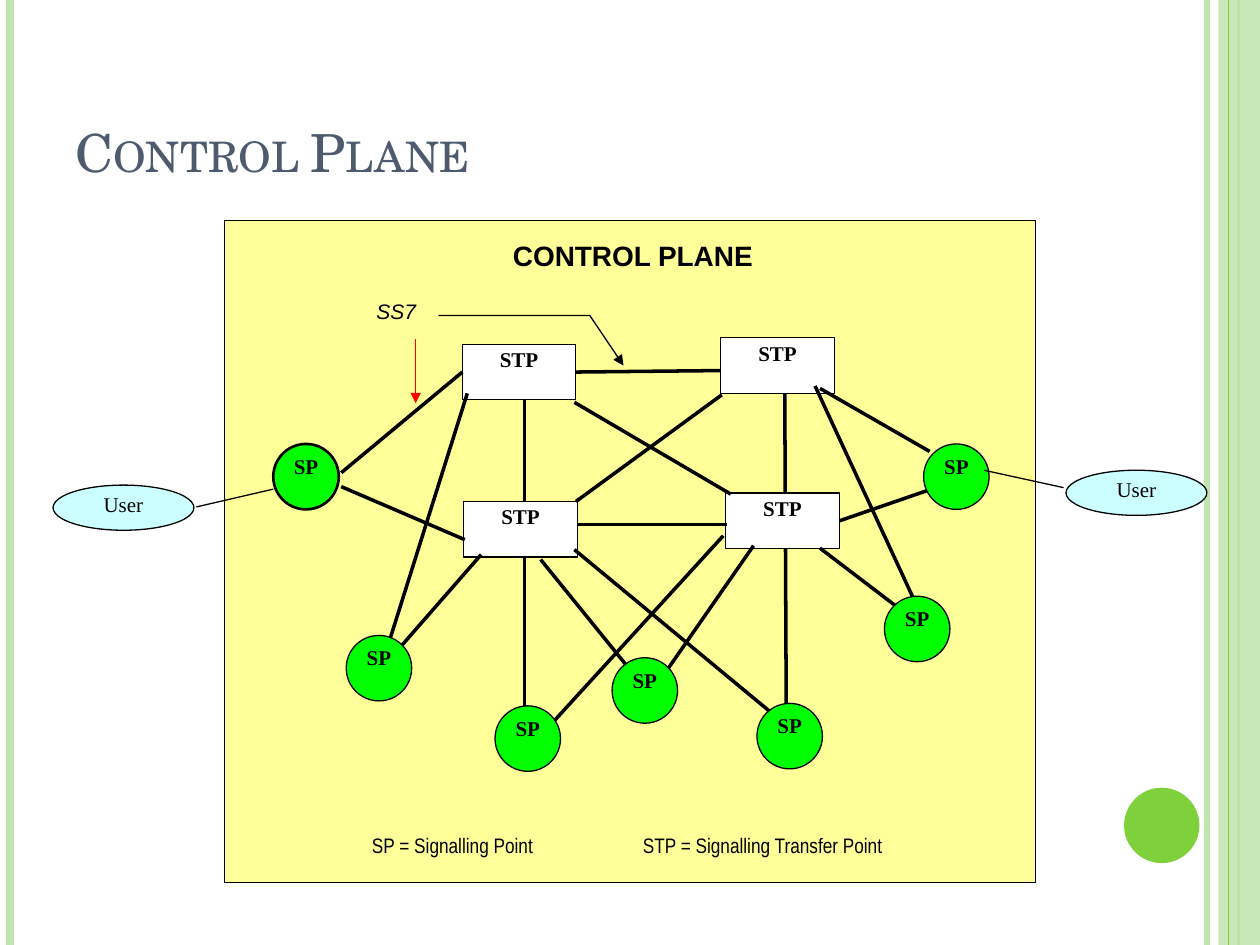
from dataclasses import dataclass

from pptx import Presentation
from pptx.dml.color import RGBColor
from pptx.enum.shapes import MSO_CONNECTOR, MSO_SHAPE
from pptx.enum.text import MSO_ANCHOR, MSO_AUTO_SIZE, PP_ALIGN
from pptx.oxml.ns import qn
from pptx.util import Cm, Pt
from lxml import etree

RECT, OVAL, STRAIGHT = MSO_SHAPE.RECTANGLE, MSO_SHAPE.OVAL, MSO_CONNECTOR.STRAIGHT
TOP, BOTTOM = MSO_ANCHOR.TOP, MSO_ANCHOR.BOTTOM
LEFT, CENTER = PP_ALIGN.LEFT, PP_ALIGN.CENTER
SITE_LEFT, SITE_RIGHT = 1, 3


@dataclass(frozen=True)
class Theme:
    ink: str = "000000"
    title: str = "4E5B6F"
    accent: str = "7FD13B"
    pale: str = "C0E5AF"
    panel: str = "FFFF99"
    stp: str = "FFFFFF"
    sp: str = "00FF00"
    user: str = "CCFFFF"
    alert: str = "FF0000"
    title_size: int = 30
    heading_size: int = 16
    label_size: int = 12
    thin: float = 0.75
    medium: float = 1.5
    thick: float = 2


T = Theme()
TITLE_FONT = dict(name="TeX Gyre Schola", size=T.title_size, color=T.title)
HEADING_FONT = dict(name="Arial", size=T.heading_size, bold=True)
SIGNAL_FONT = dict(name="Arial", size=T.label_size, italic=True)
LEGEND_FONT = dict(name="Arial Narrow", size=T.label_size)
USER_FONT = dict(name="Times New Roman", size=T.label_size)
NODE_FONT = dict(USER_FONT, bold=True)

# Positions below are centimetres from the top left corner of the panel.
STP_SIZE, SP_SIZE, USER_SIZE = (2.29, 1.12), (1.32, 1.32), (2.84, 0.91)
STPS = {"A": (4.8, 2.49), "B": (10.01, 2.36), "C": (4.83, 5.66), "D": (10.11, 5.49)}
SPS = [(2.46, 8.36), (5.46, 9.78), (7.82, 8.81), (10.74, 9.73), (13.31, 7.57), (14.1, 4.5)]
MAIN_SP = (0.99, 4.5)
USERS = [(-3.45, 5.33), (16.97, 5.03)]
TRUNKS = [((11.33, 9.91), (11.3, 3.48)), ((6.05, 10.01), (6.05, 3.48))]
# An end is either a point or an STP with one of its connection sites.
LINKS = [
    ((2.36, 5.08), ("A", SITE_LEFT)),
    ((3.35, 8.41), (4.9, 3.48)),
    ((2.36, 5.36), (4.85, 6.43)),
    (("A", SITE_RIGHT), (10.01, 3.02)),
    ((7.06, 3.66), (10.21, 5.51)),
    ((6.38, 6.83), (8.13, 8.99)),
    ((7.06, 6.63), (11.02, 9.91)),
    ((10.67, 6.55), (8.94, 9.04)),
    ((10.06, 6.35), (6.58, 10.16)),
    ((5.18, 6.73), (3.58, 8.56)),
    ((12.01, 3.38), (14.22, 4.65)),
    (("D", SITE_RIGHT), (14.17, 5.44)),
    ((11.91, 3.33), (13.92, 7.67)),
    ((12.01, 6.6), (13.61, 7.82)),
    ((7.14, 6.12), (10.13, 6.12)),
    ((7.09, 5.66), (10.03, 3.51)),
]
USER_LINKS = [((-0.56, 5.77), (0.99, 5.41)), ((15.32, 5.03), (16.92, 5.38))]
SIGNAL_ARROW = ((3.86, 2.39), (3.86, 3.68))
SIGNAL_BEND = [(4.32, 1.91), (7.37, 1.91), (8.05, 2.92)]


def rgb(value):
    return RGBColor.from_string(value)


def write(shape, text, font, align=CENTER, anchor=TOP, inset=0.05, wrap=True):
    tf = shape.text_frame
    sides = dict.fromkeys(("margin_left", "margin_top", "margin_right", "margin_bottom"), Cm(inset))
    for key, value in dict(sides, word_wrap=wrap, vertical_anchor=anchor).items():
        setattr(tf, key, value)
    p = tf.paragraphs[0]
    p.alignment = align
    r = p.add_run()
    r.text = text
    for key, value in font.items():
        if key != "color":
            setattr(r.font, key, Pt(value) if key == "size" else value)
    r.font.color.rgb = rgb(font.get("color", T.ink))
    return p


def add_box(s, kind, at, size, fill, width=T.thin):
    """Add a filled preset shape; a width of 0 leaves out its outline."""
    sp = s.shapes.add_shape(kind, *map(Cm, (*at, *size)))
    sp.shadow.inherit = False
    sp.fill.solid()
    sp.fill.fore_color.rgb = rgb(fill)
    if width:
        sp.line.color.rgb = rgb(T.ink)
        sp.line.width = Pt(width)
    else:
        sp.line.fill.background()
    return sp


def add_label(s, at, size, text, font, align=CENTER):
    return write(s.shapes.add_textbox(*map(Cm, (*at, *size))), text, font, align)


def add_line(s, start, end, color=T.ink, width=T.thick):
    line = s.shapes.add_connector(STRAIGHT, *map(Cm, (*start, *end)))
    line.line.color.rgb = rgb(color)
    line.line.width = Pt(width)
    etree.SubElement(line._element.spPr, qn("a:effectLst"))
    return line


def add_arrowhead(line):
    etree.SubElement(line.line._get_or_add_ln(), qn("a:tailEnd"), type="triangle")


def add_frame(s, width, height):
    """Add the side stripes and the dot of the slide design."""
    def stripe(x, color, weight):
        add_line(s, (x, 0), (x, height), color, weight)

    stripe(24.33, T.pale, 3)
    stripe(0.2, T.pale, 4.5)
    stripe(24.97, T.accent, 1.5)
    band = add_box(s, RECT, (width - 0.84, 0), (0.84, height), T.pale, 0)
    color = band._element.spPr.find(qn("a:solidFill"))[0]
    etree.SubElement(color, qn("a:alpha"), val="87000")
    stripe(24.77, T.accent, 0.75)
    add_box(s, OVAL, (22.66, 15.88), (1.52, 1.52), T.accent, 0)


def add_title(s, left, top, width, height):
    title = s.shapes.title
    for key, value in dict(left=left, top=top, width=width, height=height).items():
        setattr(title, key, Cm(value))
    title.text_frame.auto_size = MSO_AUTO_SIZE.NONE
    p = write(title, "Control Plane", TITLE_FONT, LEFT, BOTTOM, 0.25)
    p.runs[0].font._element.set("cap", "small")


def add_network(s, left, top, width, height):
    def at(point):
        return left + point[0], top + point[1]

    def node(kind, point, size, fill, text, font, weight=T.thin, inset=0):
        sp = add_box(s, kind, at(point), size, fill, weight)
        write(sp, text, font, inset=inset, wrap=False)
        return sp

    add_box(s, RECT, (left, top), (width, height), T.panel)
    for start, end in TRUNKS:
        add_line(s, at(start), at(end))
    stps = {name: node(RECT, point, STP_SIZE, T.stp, "STP", NODE_FONT, inset=0.05)
            for name, point in STPS.items()}
    for ends in LINKS:
        start, end = (STPS[e[0]] if e[0] in STPS else e for e in ends)
        line = add_line(s, at(start), at(end))
        for (name, site), join in zip(ends, (line.begin_connect, line.end_connect)):
            if name in stps:
                join(stps[name], site)
    for point in SPS:
        node(OVAL, point, SP_SIZE, T.sp, "SP", NODE_FONT)
    node(OVAL, MAIN_SP, SP_SIZE, T.sp, "SP", NODE_FONT, T.medium)
    for point in USERS:
        node(OVAL, point, USER_SIZE, T.user, "User", USER_FONT)
    for start, end in USER_LINKS:
        add_line(s, at(start), at(end), width=T.thin)

    add_label(s, at((4.39, 0.3)), (7.7, 1.12), "CONTROL PLANE", HEADING_FONT)
    add_label(s, at((3.02, 1.52)), (1.57, 0.91), "SS7", SIGNAL_FONT, LEFT)
    add_arrowhead(add_line(s, *map(at, SIGNAL_ARROW), T.alert, T.thin))
    first, *rest = [tuple(map(Cm, at(point))) for point in SIGNAL_BEND]
    builder = s.shapes.build_freeform(*first)
    builder.add_line_segments(rest, close=False)
    bend = builder.convert_to_shape()
    bend.shadow.inherit = False
    bend.fill.background()
    bend.line.color.rgb = rgb(T.ink)
    bend.line.width = Pt(T.thin)
    add_arrowhead(bend)

    p = add_label(s, at((2.93, 12.22)), (12.85, 1.04),
                  "SP = Signalling Point\tSTP = Signalling Transfer Point", LEGEND_FONT, LEFT)
    p.line_spacing = 1.12
    tabs = etree.SubElement(p._p.get_or_add_pPr(), qn("a:tabLst"))
    etree.SubElement(tabs, qn("a:tab"), pos=str(Cm(5.46)), algn="l")


def main():
    prs = Presentation()
    prs.slide_width, prs.slide_height = Cm(25.4), Cm(19.05)
    s = prs.slides.add_slide(prs.slide_layouts[5])
    add_frame(s, 25.4, 19.05)
    add_title(s, 1.27, 0.76, 20.75, 3.18)
    add_network(s, 4.52, 4.45, 16.36, 13.34)
    prs.save("out.pptx")


if __name__ == "__main__":
    main()
